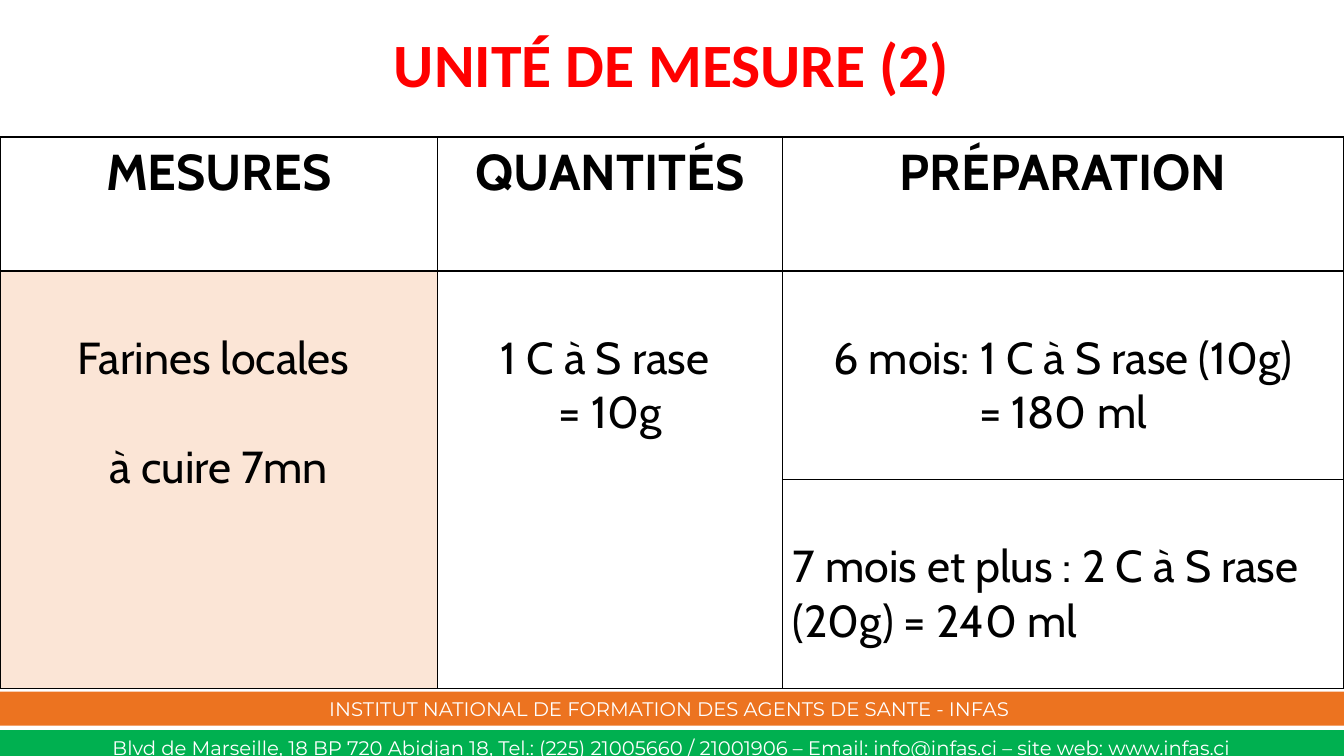
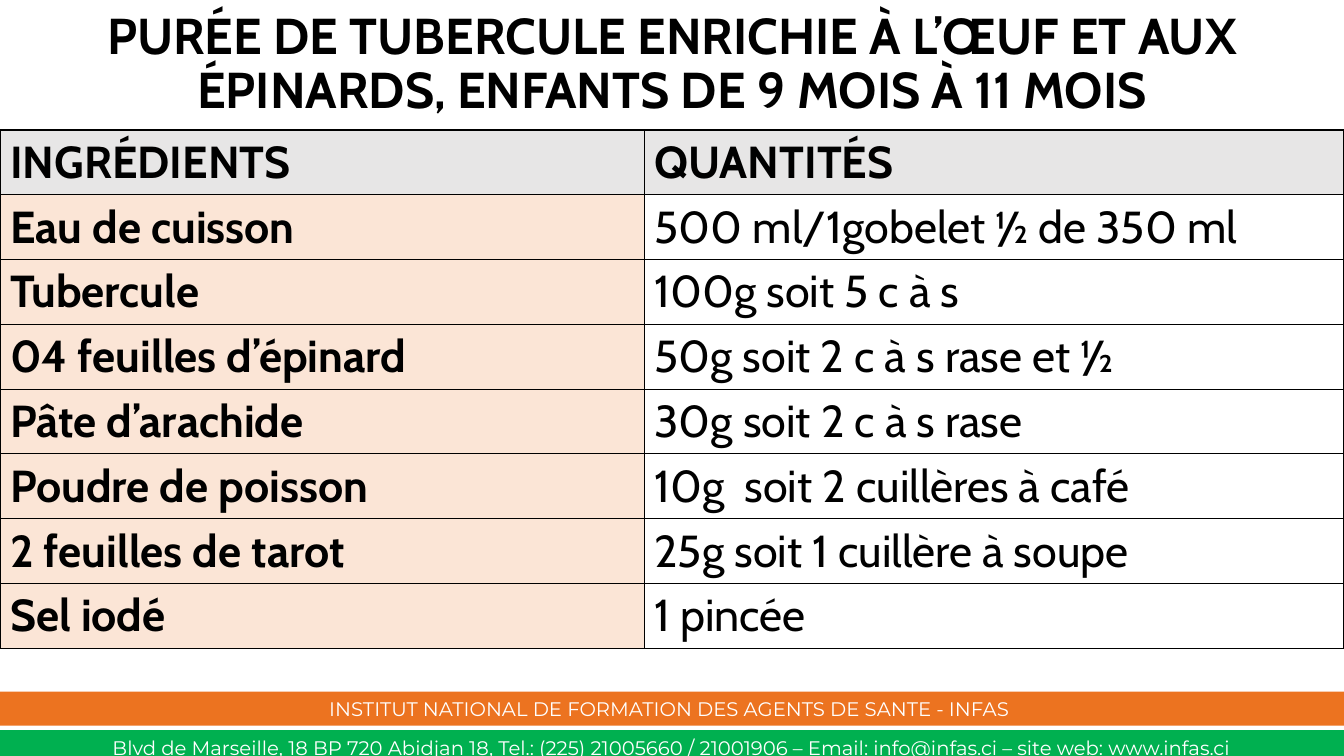
import dataclasses
import typing

import lxml.etree
import pptx
import pptx.dml.color
import pptx.enum.shapes
import pptx.enum.text
import pptx.oxml.ns
import pptx.util

SLIDE_WIDTH = pptx.util.Inches(13.33)
SLIDE_HEIGHT = pptx.util.Inches(7.5)
COLORS = {
    "black": "000000",
    "white": "FFFFFF",
    "red": "FF0000",
    "green": "00B050",
    "orange": "EC7320",
    "peach": "FBE5D6",
    "gray": "E7E6E6",
}
CENTER = pptx.enum.text.PP_ALIGN.CENTER
LEFT = pptx.enum.text.PP_ALIGN.LEFT
MIDDLE = pptx.enum.text.MSO_ANCHOR.MIDDLE
BOTTOM = pptx.enum.text.MSO_ANCHOR.BOTTOM
TABLE_FONT = "Cabin"
BODY_SIZE = 32
BODY_LINE = 39
CELL_MARGIN = 3.6


@dataclasses.dataclass(frozen=True)
class Band:
    top: float
    height: float
    color: str
    text: str
    anchor: pptx.enum.text.MSO_ANCHOR
    outlined: bool = False


@dataclasses.dataclass(frozen=True)
class Title:
    text: str
    height: float
    size: int
    font: str
    color: str


@dataclasses.dataclass(frozen=True)
class Entry:
    text: str
    fill: typing.Optional[str] = None
    size: int = BODY_SIZE
    bold: bool = False
    align: pptx.enum.text.PP_ALIGN = LEFT
    lowered: bool = False
    gap: int = 0
    rows: int = 1


@dataclasses.dataclass(frozen=True)
class Grid:
    top: float
    column_weights: tuple[float, ...]
    row_heights: tuple[float, ...]
    entries: tuple[tuple[typing.Optional[Entry], ...], ...]


BANDS = (
    Band(96.67, 3.73, "green",
         "Blvd de Marseille, 18 BP 720 Abidjan 18, Tel.: (225) 21005660 / 21001906"
         " – Email: info@infas.ci – site web: www.infas.ci", BOTTOM, outlined=True),
    Band(91.47, 4.53, "orange",
         "INSTITUT NATIONAL DE FORMATION DES AGENTS DE SANTE - INFAS ", MIDDLE),
)

MEASURES_TITLE = Title("UNITÉ DE MESURE (2)", 17.87, 44, "Calibri", "red")
MEASURES_GRID = Grid(
    18.13,
    (4.34, 3.42, 5.57),
    (17.73, 27.6, 27.6),
    (
        tuple(Entry(text, size=36, bold=True, align=CENTER)
              for text in ("MESURES", "QUANTITÉS", "PRÉPARATION")),
        (
            Entry("Farines locales \nà cuire 7mn", "peach", align=CENTER,
                  lowered=True, gap=BODY_LINE, rows=2),
            Entry("1 C à S rase \n= 10g", align=CENTER, lowered=True, rows=2),
            Entry("6 mois: 1 C à S rase (10g)\n= 180 ml", align=CENTER, lowered=True),
        ),
        (None, None, Entry("7 mois et plus : 2 C à S rase (20g) = 240 ml", lowered=True)),
    ),
)

RECIPE_TITLE = Title(
    "PURÉE DE TUBERCULE ENRICHIE À L’ŒUF ET AUX ÉPINARDS, ENFANTS DE 9 MOIS À 11 MOIS",
    17.2, 36, TABLE_FONT, "black")
INGREDIENTS = (
    ("Eau de cuisson", "500 ml/1gobelet ½ de 350 ml"),
    ("Tubercule", "100g soit 5 c à s"),
    ("04 feuilles d’épinard", "50g soit 2 c à s rase et ½"),
    ("Pâte d’arachide", "30g soit 2 c à s rase"),
    ("Poudre de poisson", "10g  soit 2 cuillères à café"),
    ("2 feuilles de tarot", "25g soit 1 cuillère à soupe"),
    ("Sel iodé", "1 pincée"),
)
RECIPE_GRID = Grid(
    17.2,
    (6.39, 6.94),
    (8.57,) * (len(INGREDIENTS) + 1),
    (
        tuple(Entry(text, "gray", bold=True) for text in ("INGRÉDIENTS", "QUANTITÉS")),
        *((Entry(name, "peach", bold=True), Entry(quantity))
          for name, quantity in INGREDIENTS),
    ),
)


def color_of(name: str) -> pptx.dml.color.RGBColor:
    return pptx.dml.color.RGBColor.from_string(COLORS[name])


def down(percent: float) -> int:
    return round(SLIDE_HEIGHT * percent / 100)


def write_text(text_frame, text: str, *, size: int, font: str, color: str = "black",
               bold: bool = False, align=CENTER, gap: int = 0,
               line_spacing: typing.Optional[float] = None) -> None:
    text_frame.word_wrap = True
    for index, line in enumerate(text.split("\n")):
        paragraph = text_frame.add_paragraph() if index else text_frame.paragraphs[0]
        paragraph.alignment = align
        if index and gap:
            paragraph.space_before = pptx.util.Pt(gap)
        if line_spacing:
            paragraph.line_spacing = line_spacing
        run = paragraph.add_run()
        run.text = line
        run.font.size = pptx.util.Pt(size)
        run.font.name = font
        run.font.bold = bold
        run.font.color.rgb = color_of(color)


def draw_band(slide, band: Band) -> None:
    shape = slide.shapes.add_shape(
        pptx.enum.shapes.MSO_SHAPE.RECTANGLE,
        0, down(band.top), SLIDE_WIDTH, down(band.height))
    shape.shadow.inherit = False
    shape.fill.solid()
    shape.fill.fore_color.rgb = color_of(band.color)
    if band.outlined:
        shape.line.color.rgb = color_of(band.color)
        shape.line.width = pptx.util.Pt(1)
    else:
        shape.line.fill.background()
    text_frame = shape.text_frame
    text_frame.margin_top = text_frame.margin_bottom = 0
    text_frame.vertical_anchor = band.anchor
    write_text(text_frame, band.text, size=14, font="Montserrat", color="white")


def draw_title(slide, title: Title) -> None:
    shape = slide.shapes.add_textbox(0, 0, SLIDE_WIDTH, down(title.height))
    shape.text_frame.vertical_anchor = MIDDLE
    write_text(shape.text_frame, title.text, size=title.size, font=title.font,
               color=title.color, bold=True, line_spacing=0.9)


def add_borders(cell) -> None:
    qualified = pptx.oxml.ns.qn
    properties = cell._tc.get_or_add_tcPr()
    for side in ("a:lnL", "a:lnR", "a:lnT", "a:lnB"):
        line = lxml.etree.SubElement(
            properties, qualified(side), w=str(pptx.util.Pt(1)))
        fill = lxml.etree.SubElement(line, qualified("a:solidFill"))
        lxml.etree.SubElement(fill, qualified("a:srgbClr"), val=COLORS["black"])


def fill_cell(cell, entry: Entry) -> None:
    if entry.fill:
        cell.fill.solid()
        cell.fill.fore_color.rgb = color_of(entry.fill)
    if entry.lowered:
        cell.margin_top = pptx.util.Pt(CELL_MARGIN + BODY_LINE)
    write_text(cell.text_frame, entry.text, size=entry.size, font=TABLE_FONT,
               bold=entry.bold, align=entry.align, gap=entry.gap)


def draw_grid(slide, grid: Grid) -> None:
    table = slide.shapes.add_table(
        len(grid.row_heights), len(grid.column_weights),
        0, down(grid.top), SLIDE_WIDTH, down(sum(grid.row_heights))).table
    table.first_row = False
    table.horz_banding = False
    for column, weight in zip(table.columns, grid.column_weights):
        column.width = round(SLIDE_WIDTH * weight / sum(grid.column_weights))
    for row, height in zip(table.rows, grid.row_heights):
        row.height = down(height)
    for row_index, entries in enumerate(grid.entries):
        for column_index, entry in enumerate(entries):
            cell = table.cell(row_index, column_index)
            add_borders(cell)
            cell.fill.background()
            if entry is None:
                continue
            if entry.rows > 1:
                cell.merge(table.cell(row_index + entry.rows - 1, column_index))
            fill_cell(cell, entry)


def build_slide(presentation, title: Title, grid: Grid) -> None:
    slide = presentation.slides.add_slide(presentation.slide_layouts[6])
    for band in BANDS:
        draw_band(slide, band)
    draw_title(slide, title)
    draw_grid(slide, grid)


def main() -> None:
    presentation = pptx.Presentation()
    presentation.slide_width = SLIDE_WIDTH
    presentation.slide_height = SLIDE_HEIGHT
    build_slide(presentation, MEASURES_TITLE, MEASURES_GRID)
    build_slide(presentation, RECIPE_TITLE, RECIPE_GRID)
    presentation.save("out.pptx")


if __name__ == "__main__":
    main()
